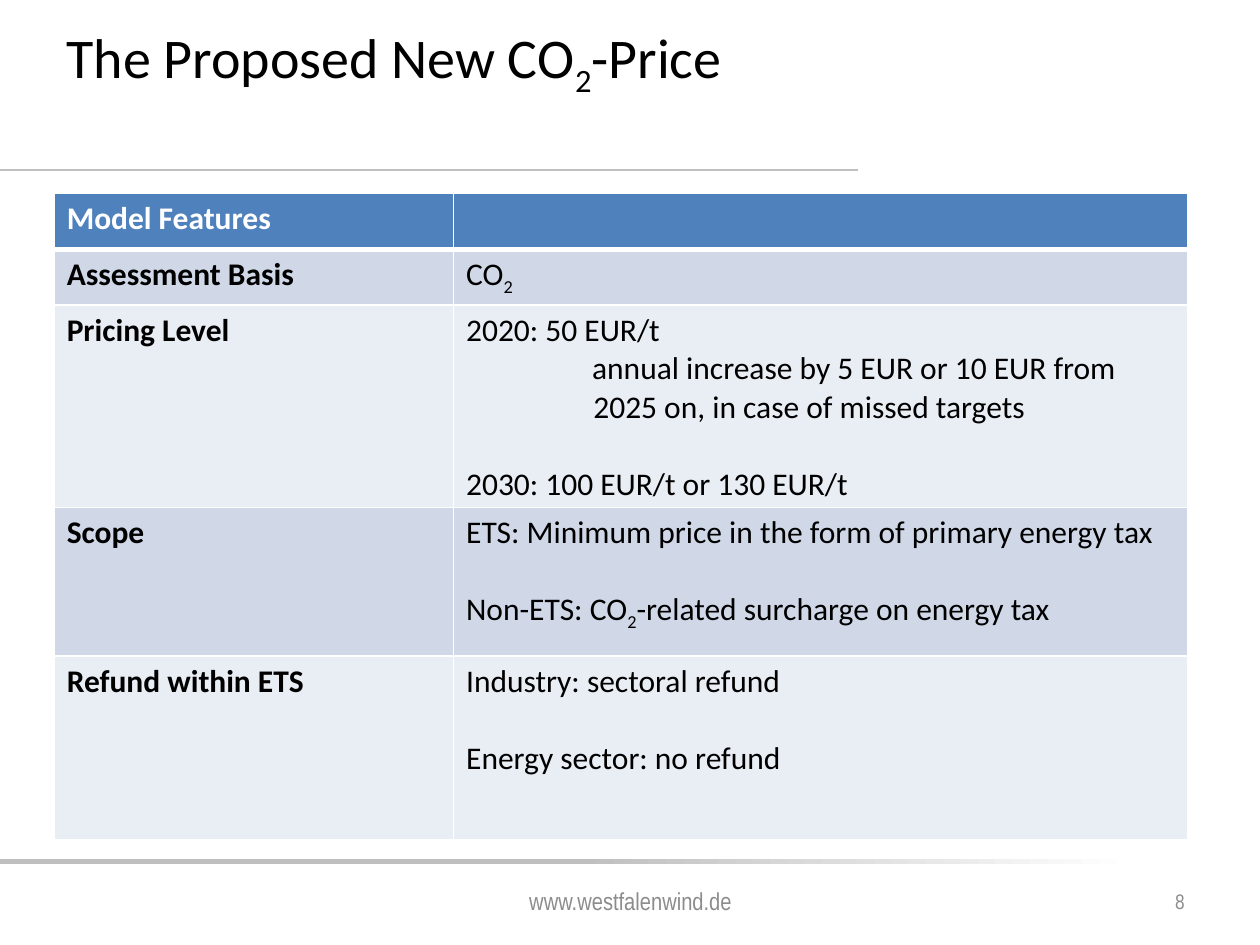
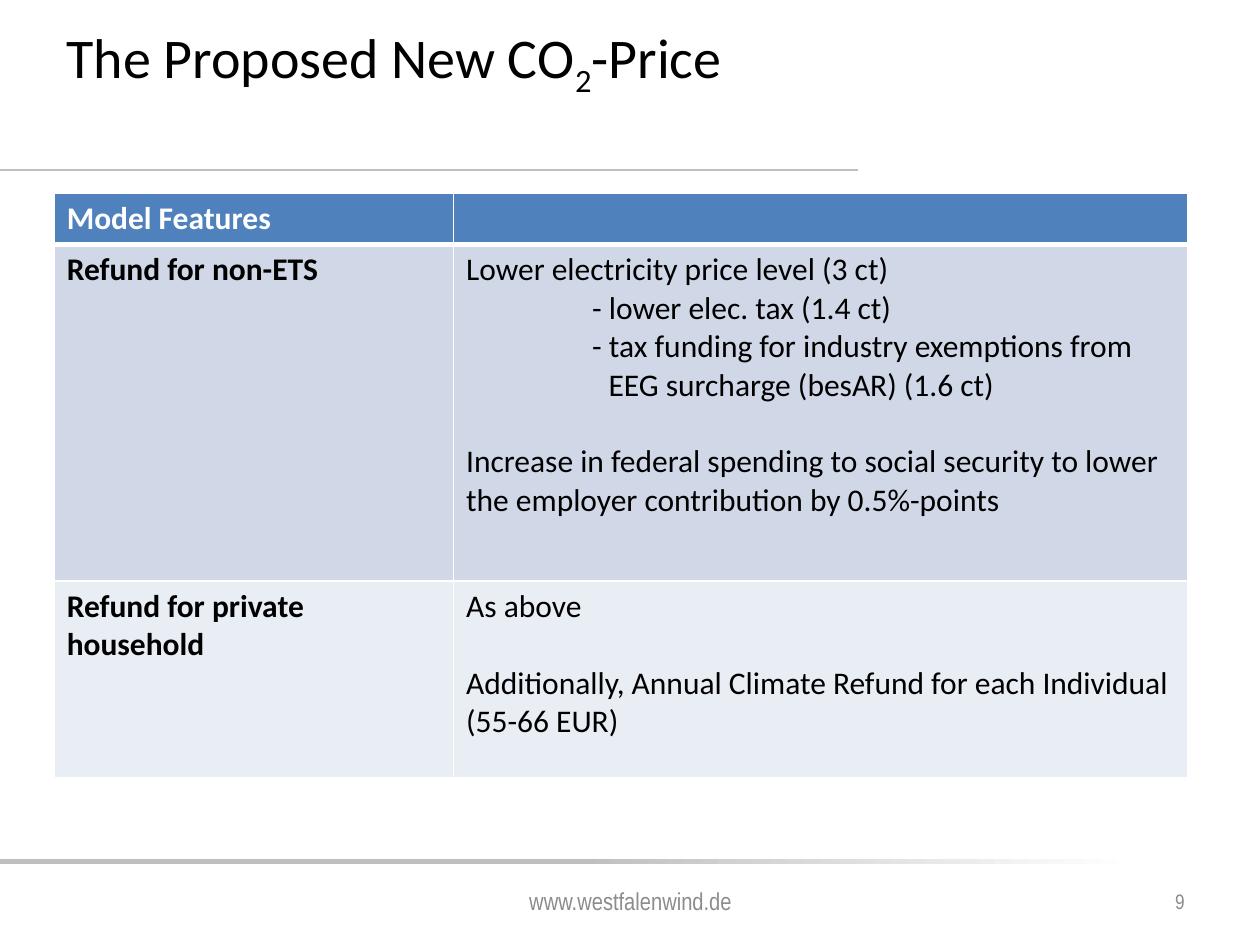
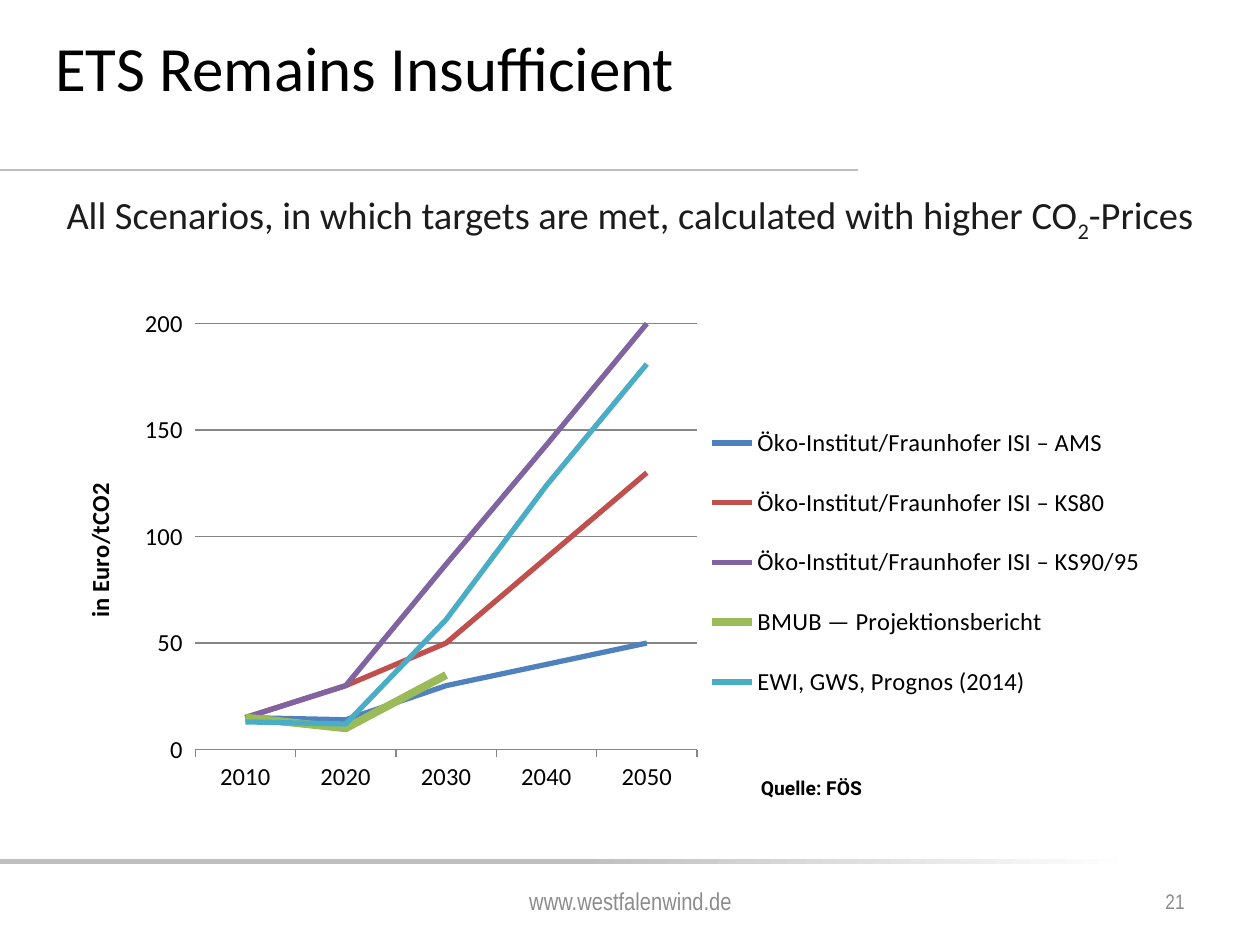
from dataclasses import dataclass

from lxml.etree import SubElement
from pptx import Presentation
from pptx.chart.data import CategoryChartData
from pptx.dml.color import RGBColor
from pptx.enum.chart import XL_CHART_TYPE, XL_LEGEND_POSITION, XL_MARKER_STYLE, XL_TICK_MARK
from pptx.enum.shapes import MSO_CONNECTOR, MSO_SHAPE
from pptx.enum.text import MSO_ANCHOR, PP_ALIGN
from pptx.oxml import parse_xml
from pptx.oxml.ns import nsdecls, qn
from pptx.util import Inches, Pt

BLACK, WHITE, INK = "000000", "FFFFFF", "1C1C1C"
RULE_GREY, FOOTER_GREY, AXIS_GREY = "BFBFBF", "8C8C8C", "868686"
HEADER_BLUE = "4F81BD"
BANDS = ("D0D8E8", "E9EDF4")
BODY_FONT, FOOTER_FONT, SOURCE_FONT = "Calibri", "Arial Narrow", "Roboto"
PRICE_TITLE = "The Proposed New CO|2|-Price"
COLUMN_WIDTHS = (3.17, 5.83)
BLANK_LINE = 22


@dataclass(frozen=True)
class Line:
    """One paragraph of a table cell."""

    text: str
    indent: float = 0
    gap: float = 0


@dataclass(frozen=True)
class Feature:
    """One row of the model features table."""

    name: str
    lines: tuple[Line, ...]
    height: float


@dataclass(frozen=True)
class Scenario:
    """One price path of the chart."""

    name: str
    prices: tuple[float | None, ...]
    color: str
    width: float = 3


PRICING_FEATURES = (
    Feature("Assessment Basis", (Line("CO|2|"),), 0.43),
    Feature("Pricing Level", (
        Line("2020: 50 EUR/t"),
        Line("annual increase by 5 EUR or 10 EUR from", indent=1),
        Line("2025 on, in case of missed targets", indent=1.01),
        Line("2030: 100 EUR/t or 130 EUR/t", gap=BLANK_LINE),
    ), 1.46),
    Feature("Scope", (
        Line("ETS: Minimum price in the form of primary energy tax"),
        Line("Non-ETS: CO|2|-related surcharge on energy tax", gap=BLANK_LINE),
    ), 1.18),
    Feature("Refund within ETS", (
        Line("Industry: sectoral refund"),
        Line("Energy sector: no refund", gap=BLANK_LINE),
    ), 1.46),
)
REFUND_FEATURES = (
    Feature("Refund for non-ETS", (
        Line("Lower electricity price level (3 ct)"),
        Line("- lower elec. tax (1.4 ct)", indent=1),
        Line("- tax funding for industry exemptions from", indent=1),
        Line("EEG surcharge (besAR) (1.6 ct)", indent=1.13),
        Line("Increase in federal spending to social security to lower "
             "the employer contribution by 0.5%-points", gap=BLANK_LINE),
    ), 2.67),
    Feature("Refund for private household", (
        Line("As above"),
        Line("Additionally, Annual Climate Refund for each Individual (55-66 EUR)",
             gap=BLANK_LINE),
    ), 1.56),
)
YEARS = ("2010", "2020", "2030", "2040", "2050")
SCENARIOS = (
    Scenario("Öko-Institut/Fraunhofer ISI – AMS", (15, 14, 30, 40, 50), "4F81BD"),
    Scenario("Öko-Institut/Fraunhofer ISI – KS80", (15, 30, 50, 90, 130), "C0504D"),
    Scenario("Öko-Institut/Fraunhofer ISI – KS90/95", (15, 30, 87, 143, 200), "8064A2"),
    Scenario("BMUB — Projektionsbericht", (15, 10, 35, None, None), "9BBB59", 4.5),
    Scenario("EWI, GWS, Prognos (2014)", (13, 12, 61, 124, 181), "4BACC6"),
)


def paint(target, color: str) -> None:
    """Give a fill one solid colour."""
    target.solid()
    target.fore_color.rgb = RGBColor.from_string(color)


def write(para, text: str, *, size: float = 18, font: str = BODY_FONT, color: str = BLACK,
          bold: bool = False, align=PP_ALIGN.LEFT, indent: float = 0, gap: float = 0) -> None:
    """Fill a paragraph, setting the parts between bars as subscript."""
    para.alignment = align
    if indent:
        para._p.get_or_add_pPr().set("marL", str(Inches(indent)))
    if gap:
        para.space_before = Pt(gap)
    for position, part in enumerate(text.split("|")):
        if not part:
            continue
        span = para.add_run()
        span.text = part
        span.font.size, span.font.name, span.font.bold = Pt(size), font, bold
        span.font.color.rgb = RGBColor.from_string(color)
        if position % 2:
            span._r.get_or_add_rPr().set("baseline", "-25000")


def add_text(page, text: str, left: float, top: float, width: float, height: float,
             anchor=MSO_ANCHOR.TOP, **text_format) -> None:
    """Place a wrapped text box with one paragraph."""
    box = page.shapes.add_textbox(Inches(left), Inches(top), Inches(width), Inches(height))
    box.text_frame.word_wrap = True
    box.text_frame.vertical_anchor = anchor
    write(box.text_frame.paragraphs[0], text, **text_format)


def add_page(deck, number: int):
    """Add a blank page with its rules, footer and number."""
    page = deck.slides.add_slide(deck.slide_layouts[6])
    rule = page.shapes.add_connector(
        MSO_CONNECTOR.STRAIGHT, 0, Inches(1.35), Inches(6.81), Inches(1.35))
    rule.line.width = Pt(1.5)
    paint(rule.line.fill, RULE_GREY)
    SubElement(rule._element.spPr, qn("a:effectLst"))

    band = page.shapes.add_shape(
        MSO_SHAPE.RECTANGLE, 0, Inches(6.82), Inches(10), Inches(0.04))
    band.shadow.inherit = False
    band.line.fill.background()
    band.fill.gradient()
    band.fill.gradient_angle = 0
    for stop, position, color in zip(
            band.fill.gradient_stops, (0.46, 0.9), (RULE_GREY, WHITE)):
        stop.position = position
        stop.color.rgb = RGBColor.from_string(color)

    footer = {"anchor": MSO_ANCHOR.MIDDLE, "font": FOOTER_FONT, "color": FOOTER_GREY}
    add_text(page, "www.westfalenwind.de", 3.42, 6.95, 3.17, 0.4,
             size=14, align=PP_ALIGN.CENTER, **footer)
    add_text(page, str(number), 7.17, 6.95, 2.33, 0.4,
             size=12, align=PP_ALIGN.RIGHT, **footer)
    return page


def style_cell(cell, fill: str, top: float = 1, bottom: float = 1) -> None:
    """Set the white borders and the fill of a cell."""
    properties = cell._tc.get_or_add_tcPr()
    for side, width in (("L", 1), ("R", 1), ("T", top), ("B", bottom)):
        properties.append(parse_xml(
            f'<a:ln{side} {nsdecls("a")} w="{Pt(width)}"><a:solidFill>'
            f'<a:srgbClr val="{WHITE}"/></a:solidFill></a:ln{side}>'))
    paint(cell.fill, fill)


def add_features(page, features: tuple[Feature, ...], header_height: float) -> None:
    """Draw the table of model features."""
    heights = [header_height, *(feature.height for feature in features)]
    table = page.shapes.add_table(
        len(heights), len(COLUMN_WIDTHS), Inches(0.43), Inches(1.53),
        Inches(sum(COLUMN_WIDTHS)), Inches(sum(heights))).table
    for column, width in zip(table.columns, COLUMN_WIDTHS):
        column.width = Inches(width)
    for row, height in zip(table.rows, heights):
        row.height = Inches(height)

    for cell in table.rows[0].cells:
        style_cell(cell, HEADER_BLUE, bottom=3)
    write(table.cell(0, 0).text_frame.paragraphs[0], "Model Features", color=WHITE, bold=True)

    for index, feature in enumerate(features):
        name_cell, detail_cell = table.rows[index + 1].cells
        for cell in (name_cell, detail_cell):
            style_cell(cell, BANDS[index % 2], top=1 if index else 3)
        write(name_cell.text_frame.paragraphs[0], feature.name, bold=True)
        frame = detail_cell.text_frame
        for position, line in enumerate(feature.lines):
            para = frame.add_paragraph() if position else frame.paragraphs[0]
            write(para, line.text, indent=line.indent, gap=line.gap)


def set_layout(element, left: float, top: float, width: float, height: float,
               inner: bool = False) -> None:
    """Fix the place of a chart part as shares of the chart."""
    for found in element.findall(qn("c:layout")):
        element.remove(found)
    target = '<c:layoutTarget val="inner"/>' if inner else ""
    places = "".join(f'<c:{key} val="{value}"/>' for key, value in
                     zip("xywh", (left, top, width, height)))
    layout = parse_xml(
        f'<c:layout {nsdecls("c")}><c:manualLayout>{target}<c:xMode val="edge"/>'
        f'<c:yMode val="edge"/>{places}</c:manualLayout></c:layout>')
    position = element.find(qn("c:legendPos"))
    element.insert(0 if position is None else element.index(position) + 1, layout)


def add_price_chart(page) -> None:
    """Draw the price paths of all scenarios."""
    data = CategoryChartData()
    data.categories = YEARS
    for scenario in SCENARIOS:
        data.add_series(scenario.name, scenario.prices)
    chart = page.shapes.add_chart(
        XL_CHART_TYPE.LINE, Inches(0.51), Inches(2.02), Inches(8.66), Inches(4.57), data).chart
    chart.has_title = False
    chart.font.size, chart.font.name = Pt(14), BODY_FONT
    chart.font.color.rgb = RGBColor.from_string(BLACK)

    plot = chart.plots[0]
    plot.vary_by_categories = False
    for series, scenario in zip(plot.series, SCENARIOS):
        series.smooth = False
        series.marker.style = XL_MARKER_STYLE.NONE
        series.format.line.width = Pt(scenario.width)
        paint(series.format.line.fill, scenario.color)

    years, prices = chart.category_axis, chart.value_axis
    years.major_tick_mark = prices.major_tick_mark = XL_TICK_MARK.OUTSIDE
    prices.minimum_scale, prices.maximum_scale, prices.major_unit = 0, 200, 50
    prices.has_major_gridlines = True
    for line in (years.format.line, prices.major_gridlines.format.line):
        line.width = Pt(0.75)
        paint(line.fill, AXIS_GREY)
    prices.format.line.fill.background()
    write(prices.axis_title.text_frame.paragraphs[0], "in Euro/tCO2", size=14, bold=True)

    chart.has_legend = True
    chart.legend.position = XL_LEGEND_POSITION.RIGHT
    chart.legend.include_in_layout = False
    set_layout(chart.legend._element, 0.59, 0.25, 0.4, 0.57)
    set_layout(chart._chartSpace.chart.plotArea, 0.12, 0.12, 0.46, 0.74, inner=True)


def main() -> None:
    """Build the deck."""
    deck = Presentation()
    deck.slide_width, deck.slide_height = Inches(10), Inches(7.5)

    for number, features, header_height in (
            (8, PRICING_FEATURES, 0.45), (9, REFUND_FEATURES, 0.41)):
        page = add_page(deck, number)
        add_text(page, PRICE_TITLE, 0.43, 0.13, 9, 1.25, size=32)
        add_features(page, features, header_height)

    page = add_page(deck, 21)
    add_text(page, "ETS Remains Insufficient", 0.34, 0.18, 9, 1.25, size=36)
    add_price_chart(page)
    add_text(page, "Quelle: FÖS", 5.94, 6.11, 2.59, 0.29, size=11, font=SOURCE_FONT, bold=True)
    add_text(page, "All Scenarios, in which targets are met, calculated with higher CO|2|-Prices",
             0.43, 1.47, 9.37, 0.47, size=22, color=INK)

    deck.save("out.pptx")


if __name__ == "__main__":
    main()
